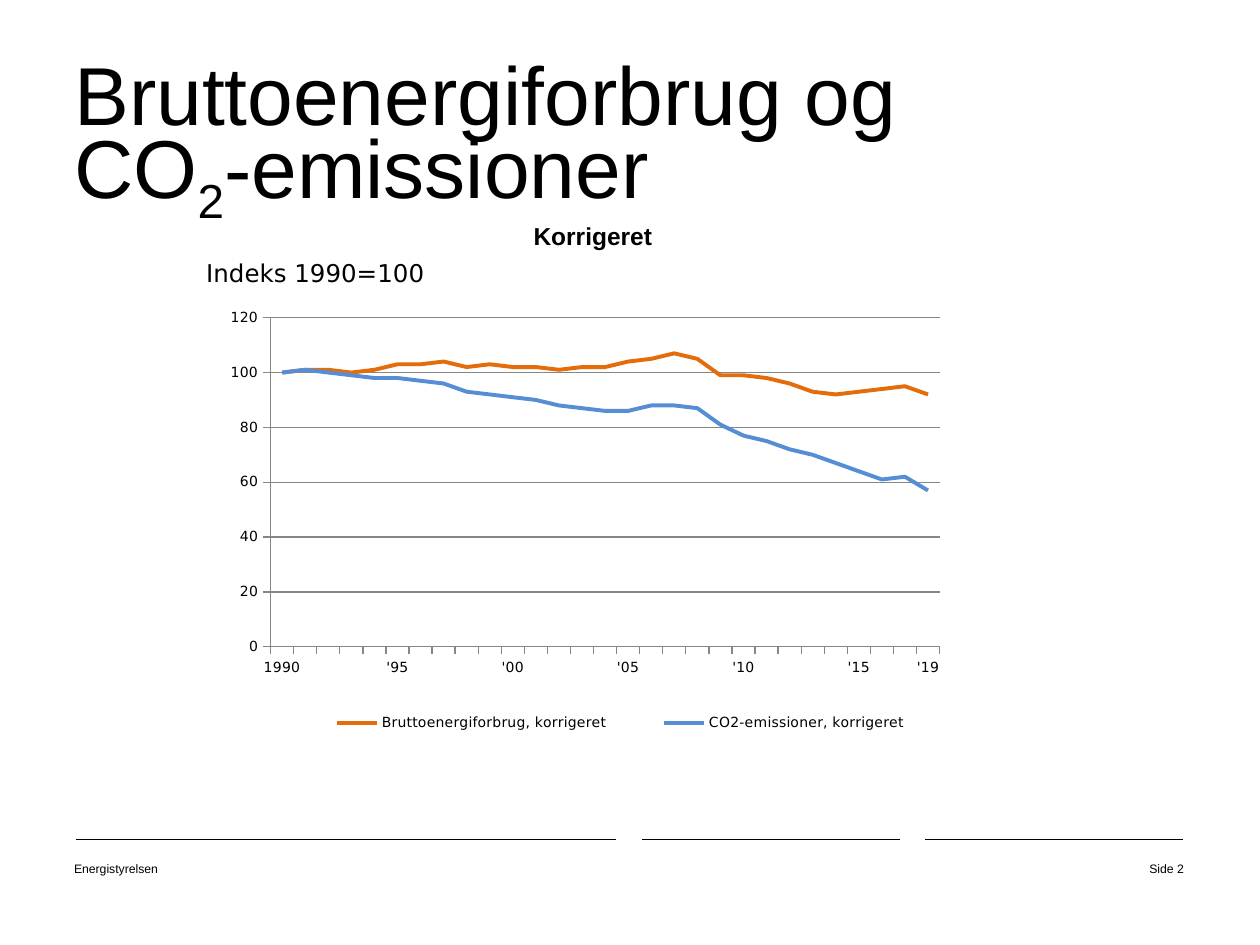
from lxml.etree import SubElement
from pptx import Presentation
from pptx.chart.data import CategoryChartData
from pptx.dml.color import RGBColor
from pptx.enum.chart import XL_CHART_TYPE, XL_LEGEND_POSITION, XL_MARKER_STYLE, XL_TICK_MARK
from pptx.enum.shapes import MSO_CONNECTOR
from pptx.enum.text import MSO_ANCHOR, PP_ALIGN
from pptx.oxml import parse_xml
from pptx.oxml.ns import nsdecls, qn
from pptx.util import Pt

BLACK = "000000"
GRID_GREY = "868686"
CATEGORY_LABELS = {0: "1990", 5: "'95", 10: "'00", 15: "'05", 20: "'10", 25: "'15", 28: "'19"}
YEAR_COUNT = 29
SERIES = [
    ("Bruttoenergiforbrug, korrigeret", "E46C0A",
     [100, 101, 101, 100, 101, 103, 103, 104, 102, 103, 102, 102, 101, 102, 102,
      104, 105, 107, 105, 99, 99, 98, 96, 93, 92, 93, 94, 95, 92]),
    ("CO2-emissioner, korrigeret", "558ED5",
     [100, 101, 100, 99, 98, 98, 97, 96, 93, 92, 91, 90, 88, 87, 86,
      86, 88, 88, 87, 81, 77, 75, 72, 70, 67, 64, 61, 62, 57]),
]


def color(hex_text):
    return RGBColor.from_string(hex_text)


def format_font(font, size, name="Arial", bold=False, fill=BLACK):
    font.size = Pt(size)
    font.name = name
    font.bold = bold
    font.color.rgb = color(fill)


def add_text(slide, box, text, size, name="Arial", bold=False,
             align=PP_ALIGN.LEFT, wrap=True):
    shape = slide.shapes.add_textbox(*map(Pt, box))
    shape.text_frame.word_wrap = wrap
    paragraph = shape.text_frame.paragraphs[0]
    paragraph.alignment = align
    run = paragraph.add_run()
    run.text = text
    format_font(run.font, size, name, bold)


def add_title(slide, box):
    title = slide.shapes.title
    title.left, title.top, title.width, title.height = map(Pt, box)
    frame = title.text_frame
    frame.word_wrap = True
    frame.vertical_anchor = MSO_ANCHOR.TOP
    frame.margin_left = frame.margin_right = Pt(7.2)
    frame.margin_top, frame.margin_bottom = Pt(0), Pt(3.6)
    paragraph = frame.paragraphs[0]
    paragraph.alignment = PP_ALIGN.LEFT
    paragraph.line_spacing = Pt(49.2)
    for text, baseline in [("Bruttoenergiforbrug og\vCO", 0), ("2", -25000), ("-emissioner", 0)]:
        for index, part in enumerate(text.split("\v")):
            if index:
                paragraph.add_line_break()
            run = paragraph.add_run()
            run.text = part
            format_font(run.font, 47)
            if baseline:
                run._r.get_or_add_rPr().set("baseline", str(baseline))


def add_footer(slide, box):
    left, top, width, height = box
    for start, length in [(0, 308.9), (324, 147.6), (486, 147.6)]:
        line = slide.shapes.add_connector(
            MSO_CONNECTOR.STRAIGHT, Pt(left + start), Pt(top), Pt(left + start + length), Pt(top))
        line.line.color.rgb = color(BLACK)
        line.line.width = Pt(0.5)
        SubElement(line._element.spPr, qn("a:effectLst"))
    text_top = top + 8.7
    add_text(slide, (left - 7.9, text_top, 228.2, height), "Energistyrelsen", 7)
    add_text(slide, (left + width - 56.2, text_top, 63.4, height), "Side 2", 7,
             align=PP_ALIGN.RIGHT)


def set_layout(element, index, box, inner=False):
    """Place a chart part by fractions of the chart's size."""
    for old in element.findall(qn("c:layout")):
        element.remove(old)
    layout = parse_xml(f"<c:layout {nsdecls('c')}><c:manualLayout/></c:layout>")
    settings = [("layoutTarget", "inner")] if inner else []
    settings += [("xMode", "edge"), ("yMode", "edge"), *zip("xywh", box)]
    for tag, value in settings:
        SubElement(layout[0], qn(f"c:{tag}")).set("val", str(value))
    element.insert(index, layout)


def format_axes(chart):
    """Leave the label font to the chart, so that year labels stay on one line."""
    for axis in (chart.category_axis, chart.value_axis):
        axis.major_tick_mark = XL_TICK_MARK.OUTSIDE
        axis.minor_tick_mark = XL_TICK_MARK.NONE
        axis.format.line.color.rgb = color(GRID_GREY)
        axis.format.line.width = Pt(0.75)
    values = chart.value_axis
    values.minimum_scale, values.maximum_scale, values.major_unit = 0, 120, 20
    values.tick_labels.number_format = "0"
    values.tick_labels.number_format_is_linked = False
    values.has_major_gridlines = True
    values.major_gridlines.format.line.color.rgb = color(GRID_GREY)
    values.major_gridlines.format.line.width = Pt(0.75)

    categories = chart.category_axis._element
    for text_format in categories.findall(qn("c:txPr")):
        categories.remove(text_format)
    skip = parse_xml(f'<c:tickLblSkip {nsdecls("c")} val="1"/>')
    categories.find(qn("c:noMultiLvlLbl")).addprevious(skip)


def add_index_chart(slide, box):
    data = CategoryChartData(number_format="0")
    data.categories = [CATEGORY_LABELS.get(year, "") for year in range(YEAR_COUNT)]
    for name, _, values in SERIES:
        data.add_series(name, values)
    chart = slide.shapes.add_chart(XL_CHART_TYPE.LINE, *map(Pt, box), data).chart
    chart.has_title = False
    format_font(chart.font, 8, "DejaVu Sans")
    format_axes(chart)

    plot = chart.plots[0]
    plot.vary_by_categories = False
    for series, (_, fill, _) in zip(plot.series, SERIES):
        series.smooth = False
        series.marker.style = XL_MARKER_STYLE.NONE
        series.format.line.color.rgb = color(fill)
        series.format.line.width = Pt(2.25)

    chart.has_legend = True
    chart.legend.position = XL_LEGEND_POSITION.BOTTOM
    chart.legend.include_in_layout = False
    set_layout(chart.legend._element, 1, (0.09, 0.875, 0.86, 0.09))
    plot_area = chart._chartSpace.chart.plotArea
    set_layout(plot_area, 0, (0.073, 0.051, 0.854, 0.706), inner=True)


def add_chart_region(slide, box):
    left, top, width, height = box
    add_text(slide, (left + 187.2, top, 85, 24.5), "Korrigeret", 14, bold=True, wrap=False)
    add_text(slide, (left, top + 20.9, 141.8, 24.5), "Indeks 1990=100", 14,
             "DejaVu Sans", wrap=False)
    add_index_chart(slide, (left + 11.2, top + 45.1, width - 11.2, height - 45.1))


def main():
    presentation = Presentation()
    presentation.slide_width, presentation.slide_height = Pt(720.7), Pt(540.7)
    slide = presentation.slides.add_slide(presentation.slide_layouts[5])
    add_footer(slide, (43.2, 480.5, 633.8, 28.8))
    add_title(slide, (35.3, 32.2, 648, 103))
    add_chart_region(slide, (110.9, 123.1, 459.3, 311.8))
    presentation.save("out.pptx")


if __name__ == "__main__":
    main()
